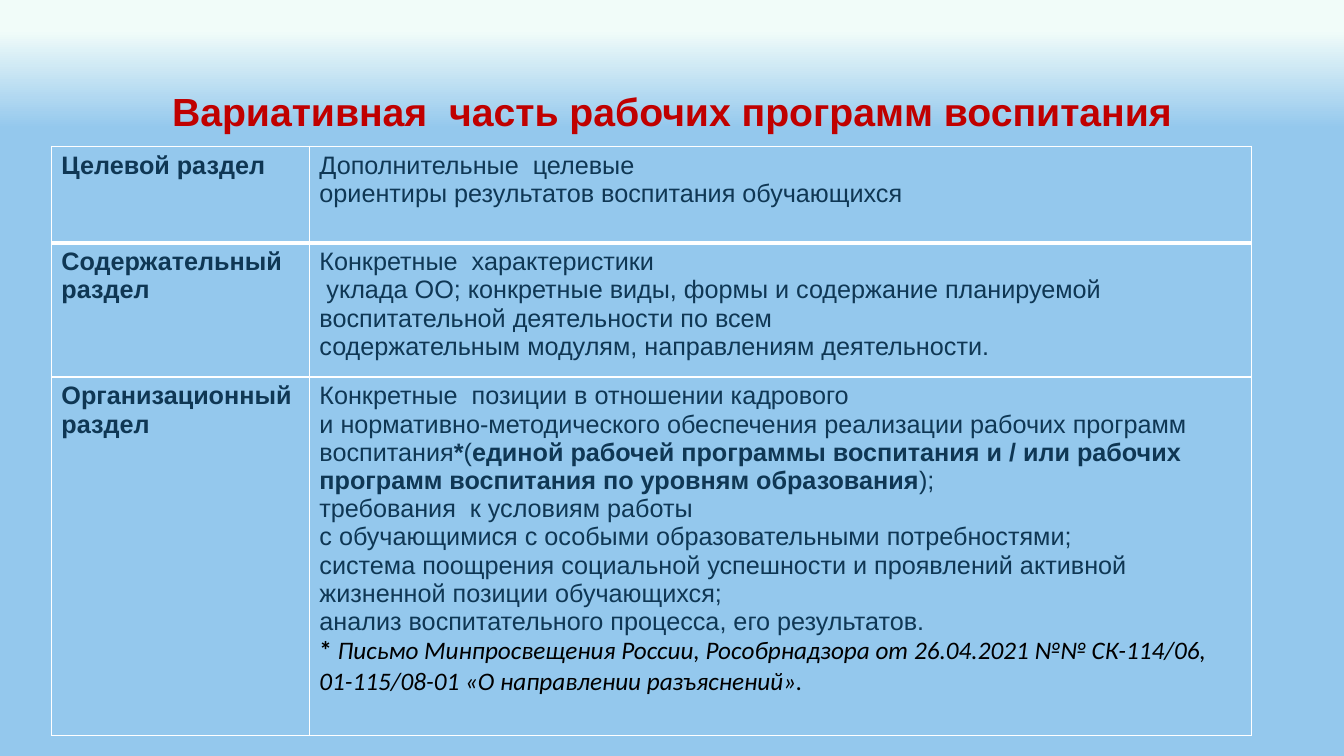
from lxml import etree
from pptx import Presentation
from pptx import util as u
from pptx.dml import color
from pptx.enum import text
from pptx.oxml import ns

hex_color = color.RGBColor.from_string
SKY, NAVY, RED, BLACK, WHITE = "94C8ED", "0F3754", "C00000", "000000", "FFFFFF"


def add_text(paragraph, content, size=18, font="Arial", fill=NAVY, bold=False, italic=False):
    for index, line in enumerate(content.split("\n")):
        if index:
            paragraph.add_line_break()
        run = paragraph.add_run()
        run.text = line
        run.font.size = u.Pt(size)
        run.font.name = font
        run.font.bold = bold
        run.font.italic = italic
        run.font.color.rgb = hex_color(fill)


def add_solid_color(parent, value):
    solid = etree.SubElement(parent, ns.qn("a:solidFill"))
    etree.SubElement(solid, ns.qn("a:srgbClr"), val=value)


presentation = Presentation()
presentation.slide_width, presentation.slide_height = u.Pt(960), u.Pt(540)
slide = presentation.slides.add_slide(presentation.slide_layouts[6])

# Background gradient from top to bottom
background = slide.background.fill
background.gradient()
background.gradient_angle = 270
stops = slide.element.find(".//" + ns.qn("a:gsLst"))
for stop in list(stops):
    stops.remove(stop)
for position, value in ((4, "F1FCF9"), (17, SKY), (100, SKY)):
    stop = etree.SubElement(stops, ns.qn("a:gs"), pos=str(position * 1000))
    etree.SubElement(stop, ns.qn("a:srgbClr"), val=value)

# Title
title = slide.shapes.add_textbox(u.Pt(66), u.Pt(28.8), u.Pt(828), u.Pt(104.4)).text_frame
title.word_wrap = True
title.vertical_anchor = text.MSO_ANCHOR.MIDDLE
heading = title.paragraphs[0]
heading.alignment = text.PP_ALIGN.CENTER
heading.line_spacing = 0.9
add_text(heading, "Вариативная  часть рабочих программ воспитания", size=28, fill=RED, bold=True)

# Table content: section name, then paragraphs made of (text, format) pieces
bold = {"bold": True}
note = {"font": "Calibri", "fill": BLACK}
sections = [
    ("Целевой раздел", [
        [("Дополнительные  целевые", {})],
        [("ориентиры результатов воспитания обучающихся", {})],
    ]),
    ("Содержательный раздел", [
        [("Конкретные  характеристики\n"
          " уклада ОО; конкретные виды, формы и содержание планируемой\n"
          "воспитательной деятельности по всем\n"
          "содержательным модулям, направлениям деятельности.", {})],
    ]),
    ("Организационный раздел", [
        [("Конкретные  позиции в отношении кадрового\n"
          "и нормативно-методического обеспечения реализации рабочих программ\n"
          "воспитания", {}),
         ("*", bold),
         ("(", {}),
         ("единой рабочей программы воспитания и / или рабочих программ "
          "воспитания по уровням образования", bold),
         (");", {})],
        [("требования  к условиям работы\n"
          "с обучающимися с особыми образовательными потребностями;", {})],
        [("система поощрения социальной успешности и проявлений активной "
          "жизненной позиции обучающихся;\n"
          "анализ воспитательного процесса, его результатов.", {})],
        [("* ", {**note, "bold": True}),
         ("Письмо Минпросвещения России, Рособрнадзора от 26.04.2021 №№ СК-114/06, "
          "01-115/08-01 «О направлении разъяснений».", {**note, "italic": True})],
    ]),
]

# Table grid
column_widths = (184.3, 672.7)
row_heights = (69.1, 95.8, 256.3)
table = slide.shapes.add_table(
    len(row_heights), len(column_widths), u.Pt(36.7), u.Pt(104.4),
    u.Pt(sum(column_widths)), u.Pt(sum(row_heights))).table
for column, width in zip(table.columns, column_widths):
    column.width = u.Pt(width)
for row, height in zip(table.rows, row_heights):
    row.height = u.Pt(height)

# Cells: text, white borders with a thick rule under the first row, fill
for row_index, (name, details) in enumerate(sections):
    for column_index, paragraphs in enumerate(([[(name, bold)]], details)):
        cell = table.cell(row_index, column_index)
        for index, pieces in enumerate(paragraphs):
            frame = cell.text_frame
            paragraph = frame.add_paragraph() if index else frame.paragraphs[0]
            for content, style in pieces:
                add_text(paragraph, content, **style)
        properties = cell._tc.get_or_add_tcPr()
        for side in ("lnL", "lnR", "lnT", "lnB"):
            thick = (row_index, side) in ((0, "lnB"), (1, "lnT"))
            border = etree.SubElement(properties, ns.qn("a:" + side), w=str(u.Pt(3 if thick else 1)))
            add_solid_color(border, WHITE)
        cell.fill.solid()
        cell.fill.fore_color.rgb = hex_color(SKY)

presentation.save("out.pptx")
